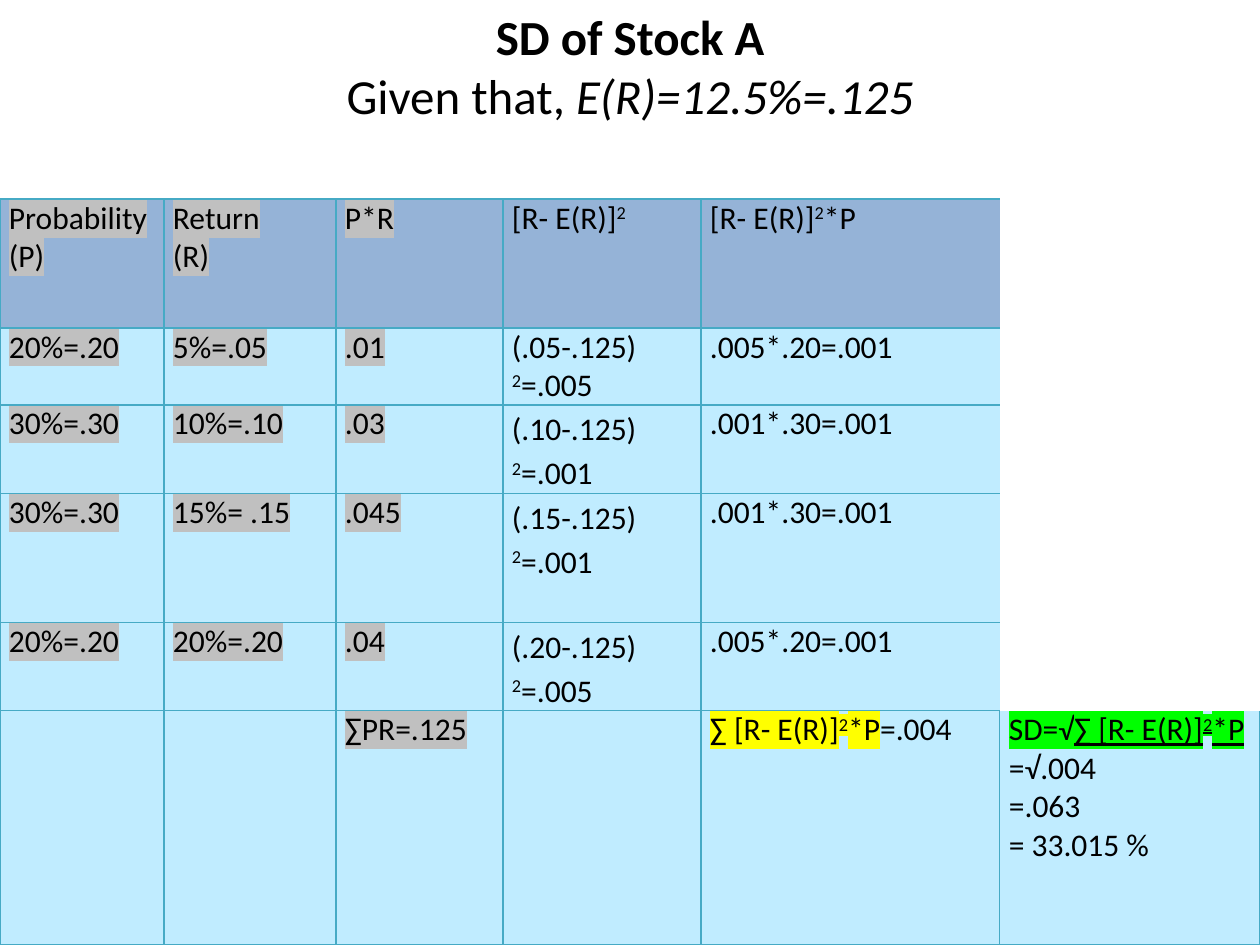
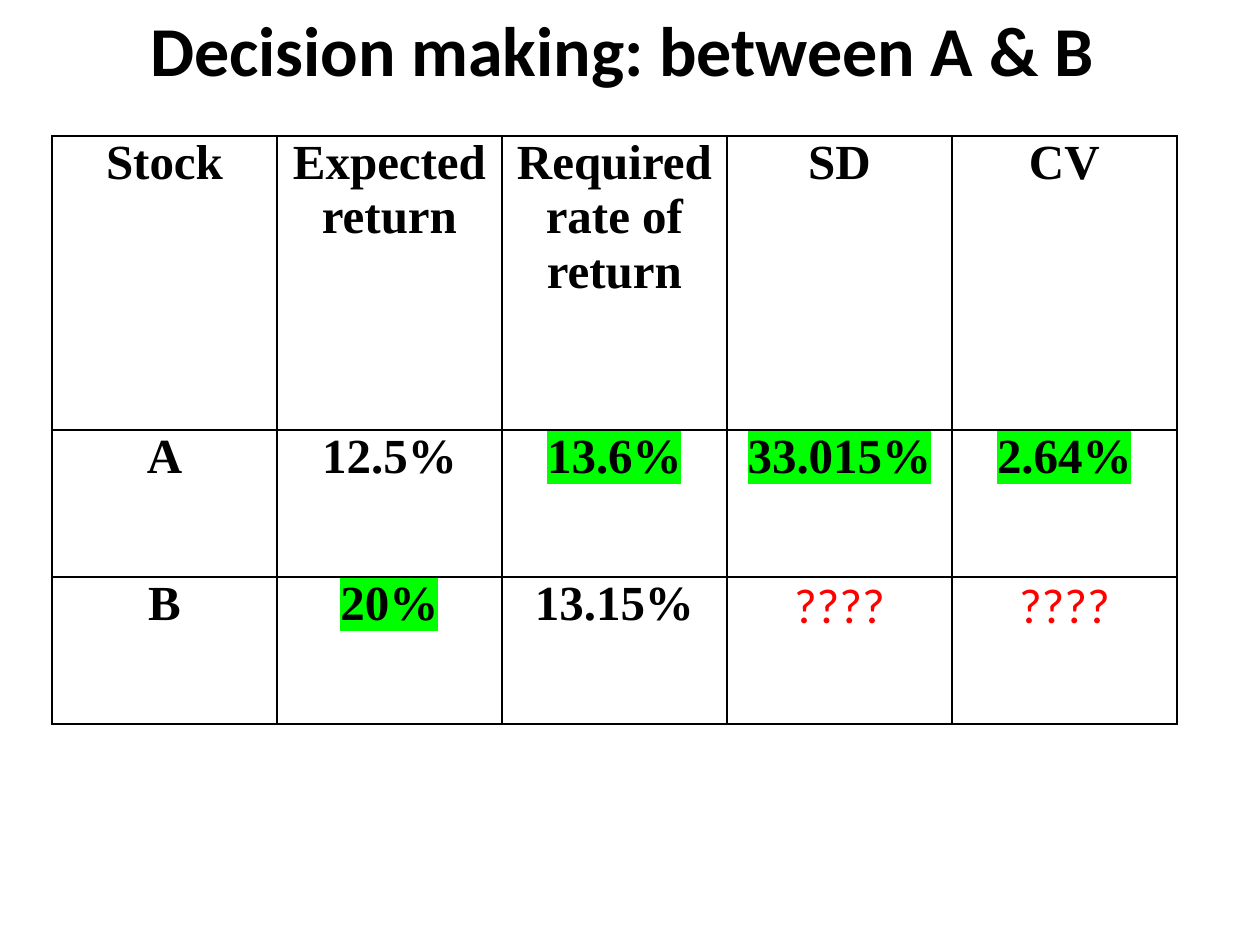
from dataclasses import dataclass, replace
from lxml.etree import SubElement
from pptx import Presentation
from pptx.dml.color import RGBColor as Color
from pptx.enum.text import MSO_ANCHOR as Anchor, MSO_AUTO_SIZE as AutoSize, PP_ALIGN as Align
from pptx.oxml.ns import qn
from pptx.util import Pt

PX = 914400 / 126  # EMU in one px
PAGE_WIDTH, PAGE_HEIGHT = 1260, 945
TITLE_ONLY = 5
CELL_INSET = 9


@dataclass(frozen=True)
class Theme:
    sans: str = "Calibri"
    serif: str = "Times New Roman"
    text: str = "000000"
    alert: str = "FF0000"
    white: str = "FFFFFF"
    header: str = "95B3D7"
    body: str = "C0ECFF"
    rule: str = "46AAC5"
    grey: str = "C0C0C0"
    yellow: str = "FFFF00"
    green: str = "00FF00"
    cell_size: int = 18
    large_size: int = 28
    title_size: int = 40


THEME = Theme()


@dataclass(frozen=True)
class Style:
    size: int
    font: str = THEME.sans
    color: str = THEME.text
    bold: bool = False
    italic: bool = False
    underline: bool = False
    raised: bool = False
    mark: str = ""


@dataclass(frozen=True)
class CellLook:
    fill: str
    border: str
    border_width: float
    sides: str = "LRTB"


TITLE = Style(THEME.title_size, bold=True)
SUBTITLE = Style(THEME.large_size)
PLAIN = Style(THEME.cell_size)
GREY = replace(PLAIN, mark=THEME.grey)
RAISED = replace(PLAIN, raised=True)
YELLOW = replace(PLAIN, mark=THEME.yellow)
GREEN = replace(PLAIN, mark=THEME.green)
ROOT = replace(GREEN, underline=True)
STRONG = Style(THEME.large_size, THEME.serif, bold=True)
BEST = replace(STRONG, mark=THEME.green)
UNKNOWN = Style(THEME.large_size, color=THEME.alert)


def px(length):
    return round(length * PX)


# Text
def add_span(para, text, style):
    span = para.add_run()
    span.text = text
    font = span.font
    font.name, font.size = style.font, Pt(style.size)
    font.bold, font.italic, font.underline = style.bold, style.italic, style.underline
    font.color.rgb = Color.from_string(style.color)
    properties = span._r.get_or_add_rPr()
    if style.raised:
        properties.set("baseline", "30000")
    if style.mark:
        highlight = SubElement(properties, qn("a:highlight"))
        SubElement(highlight, qn("a:srgbClr"), val=style.mark)
        properties.find(qn("a:solidFill")).addnext(highlight)


def write(frame, paragraphs, align, spacing=None):
    for index, spans in enumerate(paragraphs):
        para = frame.add_paragraph() if index else frame.paragraphs[0]
        para.alignment = align
        if spacing:
            para.line_spacing = spacing
        for text, style in spans:
            add_span(para, text, style)


def place_title(page, height, paragraphs):
    box = page.shapes.title
    box.left, box.top, box.width, box.height = 0, 0, px(PAGE_WIDTH), px(height)
    frame = box.text_frame
    frame.word_wrap = True
    frame.auto_size = AutoSize.NONE
    frame.vertical_anchor = Anchor.TOP
    write(frame, paragraphs, Align.CENTER)


# Tables
def add_grid(page, left, top, widths, heights):
    frame = page.shapes.add_table(len(heights), len(widths), px(left), px(top),
                                  px(sum(widths)), px(sum(heights)))
    table = frame.table
    table.first_row = table.horz_banding = False
    for column, width in zip(table.columns, widths):
        column.width = px(width)
    for row, height in zip(table.rows, heights):
        row.height = px(height)
    return table


def dress_cell(cell, look):
    cell.margin_left = cell.margin_right = px(CELL_INSET)
    cell.margin_top = cell.margin_bottom = 0
    properties = cell._tc.get_or_add_tcPr()
    for side in "LRTB":
        line = SubElement(properties, qn(f"a:ln{side}"), w=str(Pt(look.border_width)))
        if side in look.sides:
            paint = SubElement(line, qn("a:solidFill"))
            SubElement(paint, qn("a:srgbClr"), val=look.border)
        else:
            SubElement(line, qn("a:noFill"))
    cell.fill.solid()
    cell.fill.fore_color.rgb = Color.from_string(look.fill)


# Standard deviation slide
def deviation_rows():
    def one(text, style=PLAIN):
        return [[(text, style)]]

    deviation = "[R- E(R)]"
    yield [one("Probability (P)", GREY), [[("Return", GREY)], [("(R)", GREY)]],
           one("P*R", GREY), [[(deviation, PLAIN), ("2", RAISED)]],
           [[(deviation, PLAIN), ("2", RAISED), ("*P", PLAIN)]], []]
    for chance, gain, product, base, square, weighted in (
        ("20%=.20", "5%=.05", ".01", "(.05-.125)", "=.005", ".005*.20=.001"),
        ("30%=.30", "10%=.10", ".03", "(.10-.125)", "=.001", ".001*.30=.001"),
        ("30%=.30", "15%= .15", ".045", "(.15-.125)", "=.001", ".001*.30=.001"),
        ("20%=.20", "20%=.20", ".04", "(.20-.125)", "=.005", ".005*.20=.001"),
    ):
        yield [one(chance, GREY), one(gain, GREY), one(product, GREY),
               [[(base, PLAIN), (" 2", RAISED), (square, PLAIN)]], one(weighted), []]
    total = "∑ " + deviation
    yield [[], [], one("∑PR=.125", GREY), [],
           [[(total, YELLOW), ("2", replace(YELLOW, raised=True)),
             ("*P", YELLOW), ("=.004", PLAIN)]],
           [[("SD=√", GREEN), (total, ROOT), ("2", replace(ROOT, raised=True)),
             ("*P", ROOT)],
            *([(text, PLAIN)] for text in ("=√.004", "=.063", "= 33.015 %"))]]


def deviation_look(row, column, last_row):
    look = CellLook(THEME.body if row else THEME.header, THEME.rule, 0.75)
    if column == 5:
        if row == last_row:
            return replace(look, sides="LRB")
        return replace(look, fill=THEME.white, sides="")
    if column == 4 and row < last_row:
        return replace(look, sides="LTB")
    return look


def build_deviation(page):
    place_title(page, 131, [
        [("SD of Stock A", replace(SUBTITLE, bold=True))],
        [("Given that, ", SUBTITLE), ("E(R)=12.5%=.125", replace(SUBTITLE, italic=True))],
    ])
    heights = [129, 75, 87, 129, 87, 234]
    table = add_grid(page, 0, 199, [164, 172, 167, 198, 299, 260], heights)
    last_row = len(heights) - 1
    for row, cells in enumerate(deviation_rows()):
        for column, paragraphs in enumerate(cells):
            cell = table.cell(row, column)
            dress_cell(cell, deviation_look(row, column, last_row))
            loose = column == 3 and 1 < row < last_row
            ragged = loose or (row == last_row and column > 3)
            write(cell.text_frame, paragraphs, Align.LEFT if ragged else Align.JUSTIFY,
                  1.15 if loose else None)


# Decision slide
def build_decision(page):
    place_title(page, 136, [[("Decision making: between A & B ", TITLE)]])
    rows = (
        ("Stock", "Expected return", "Required rate of return", "SD", "CV"),
        ("A", "12.5%", "13.6%", "33.015%", "2.64%"),
        ("B", "20%", "13.15%", "????", "????"),
    )
    styles = {(1, 2): BEST, (1, 3): BEST, (1, 4): BEST, (2, 1): BEST,
              (2, 3): UNKNOWN, (2, 4): UNKNOWN}
    table = add_grid(page, 52, 136, [225] * 5, [294, 147, 147])
    for row, texts in enumerate(rows):
        for column, text in enumerate(texts):
            cell = table.cell(row, column)
            dress_cell(cell, CellLook(THEME.white, THEME.text, 1))
            write(cell.text_frame, [[(text, styles.get((row, column), STRONG))]], Align.CENTER)


def main():
    deck = Presentation()
    deck.slide_width, deck.slide_height = px(PAGE_WIDTH), px(PAGE_HEIGHT)
    for build in (build_deviation, build_decision):
        build(deck.slides.add_slide(deck.slide_layouts[TITLE_ONLY]))
    deck.save("out.pptx")


if __name__ == "__main__":
    main()
